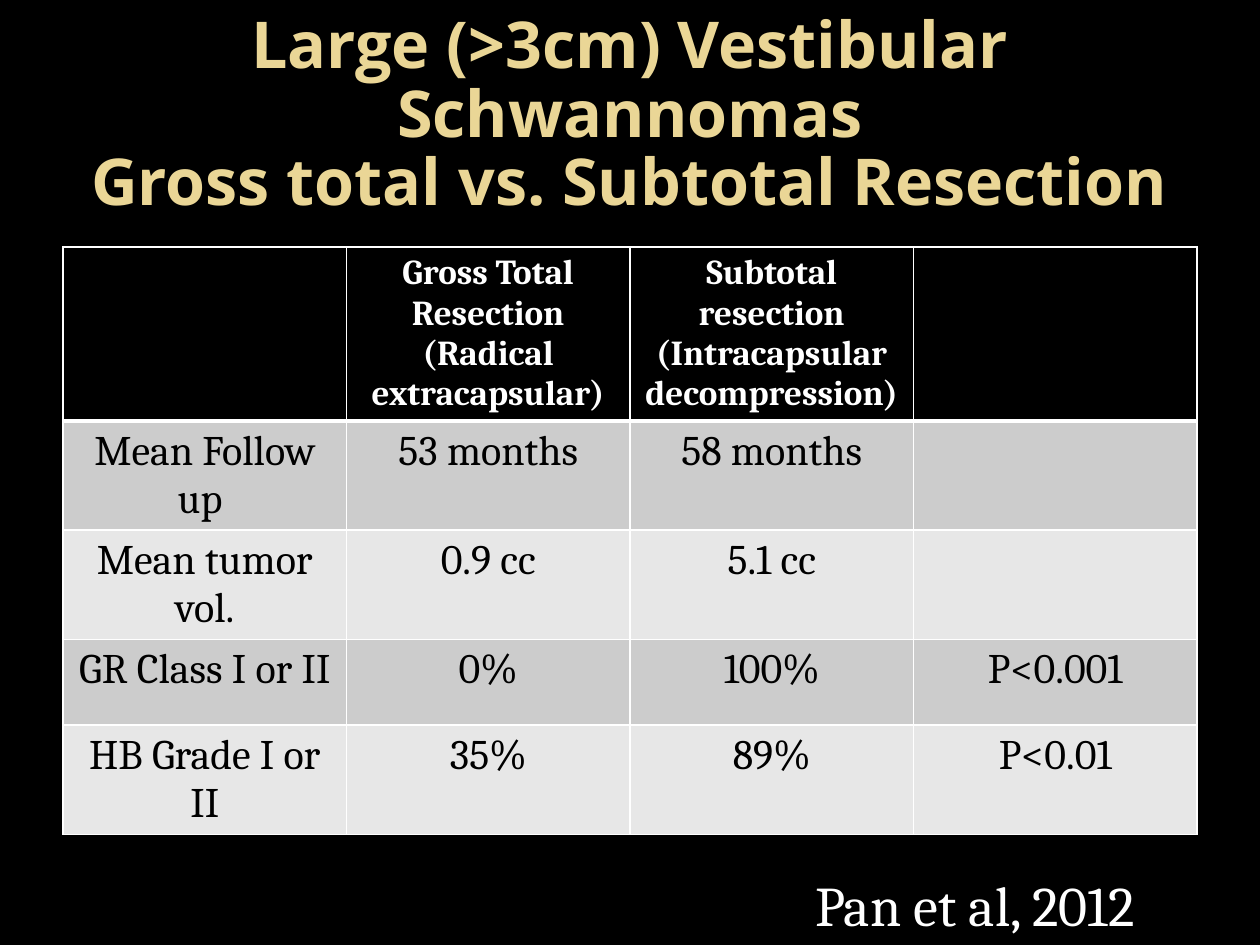
import pptx
import pptx.util
import pptx.dml.color
import pptx.enum.text
import pptx.oxml
from lxml import etree
from pptx.util import Inches, Pt

TITLE = "Large (>3cm) Vestibular Schwannomas\vGross total vs. Subtotal Resection"
CITATION = "Pan et al, 2012"
ROWS = [
    ["", "Gross Total Resection\n(Radical extracapsular)",
     "Subtotal resection\n(Intracapsular decompression)", ""],
    ["Mean Follow up ", "53 months", "58 months", ""],
    ["Mean tumor vol.", "0.9 cc", "5.1 cc", ""],
    ["GR Class I or II", "0%", "100%", "P<0.001"],
    ["HB Grade I or II", "35%", "89%", "P<0.01"],
]
BLACK, WHITE, GOLD = "000000", "FFFFFF", "EAD696"
BANDS = ["CCCCCC", "E7E7E7"]
COL_WIDTH, ROW_HEIGHT = 2.25, 0.68
CENTER = pptx.enum.text.PP_ALIGN.CENTER


def rgb(color):
    return pptx.dml.color.RGBColor.from_string(color)


def format_text(tf, size, font, color, bold=False, align=None):
    for p in tf.paragraphs:
        p.alignment = align
        for r in p.runs:
            r.font.size, r.font.name, r.font.bold = Pt(size), font, bold
            r.font.color.rgb = rgb(color)


def set_borders(cell, top, bottom):
    """Draw white cell borders; top and bottom widths are in points."""
    tc_pr = cell._tc.get_or_add_tcPr()
    sides = [("lnL", 1), ("lnR", 1), ("lnT", top), ("lnB", bottom)]
    for i, (tag, width) in enumerate(sides):
        ln = etree.Element(pptx.oxml.ns.qn("a:" + tag), w=str(Pt(width)))
        fill = etree.SubElement(ln, pptx.oxml.ns.qn("a:solidFill"))
        etree.SubElement(fill, pptx.oxml.ns.qn("a:srgbClr"), val=WHITE)
        tc_pr.insert(i, ln)


def add_title(s):
    title = s.shapes.title
    title.left, title.top = Inches(0.5), Inches(0.3)
    title.width, title.height = Inches(9), Inches(1.25)
    tf = title.text_frame
    tf.text = TITLE
    tf.word_wrap = True
    tf.auto_size = pptx.enum.text.MSO_AUTO_SIZE.NONE
    tf.vertical_anchor = pptx.enum.text.MSO_ANCHOR.MIDDLE
    tf.paragraphs[0].line_spacing = 0.88
    format_text(tf, 36.9, "Open Sans", GOLD, True, CENTER)


def add_results(s):
    n_rows, n_cols = len(ROWS), len(ROWS[0])
    table = s.shapes.add_table(
        n_rows, n_cols, Inches(0.5), Inches(1.96),
        Inches(COL_WIDTH * n_cols), Inches(ROW_HEIGHT * n_rows)).table
    for i, row in enumerate(ROWS):
        header = i == 0
        for j, text in enumerate(row):
            cell = table.cell(i, j)
            cell.text_frame.text = text
            cell.fill.solid()
            cell.fill.fore_color.rgb = rgb(BLACK if header else BANDS[(i - 1) % 2])
            format_text(cell.text_frame, 20 if header else 24, "Cambria",
                        WHITE if header else BLACK, header, CENTER)
            set_borders(cell, 3 if i == 1 else 1, 3 if header else 1)


def add_citation(s):
    box = s.shapes.add_textbox(Inches(6.37), Inches(6.86), Inches(2.89), Inches(0.64))
    tf = box.text_frame
    tf.text = CITATION
    tf.word_wrap = False
    tf.auto_size = pptx.enum.text.MSO_AUTO_SIZE.SHAPE_TO_FIT_TEXT
    format_text(tf, 32, "Cambria", WHITE)


def main():
    prs = pptx.Presentation()
    prs.slide_width, prs.slide_height = Inches(10), Inches(7.5)
    s = prs.slides.add_slide(prs.slide_layouts[5])
    s.background.fill.solid()
    s.background.fill.fore_color.rgb = rgb(BLACK)
    add_title(s)
    add_results(s)
    add_citation(s)
    prs.save("out.pptx")


if __name__ == "__main__":
    main()
